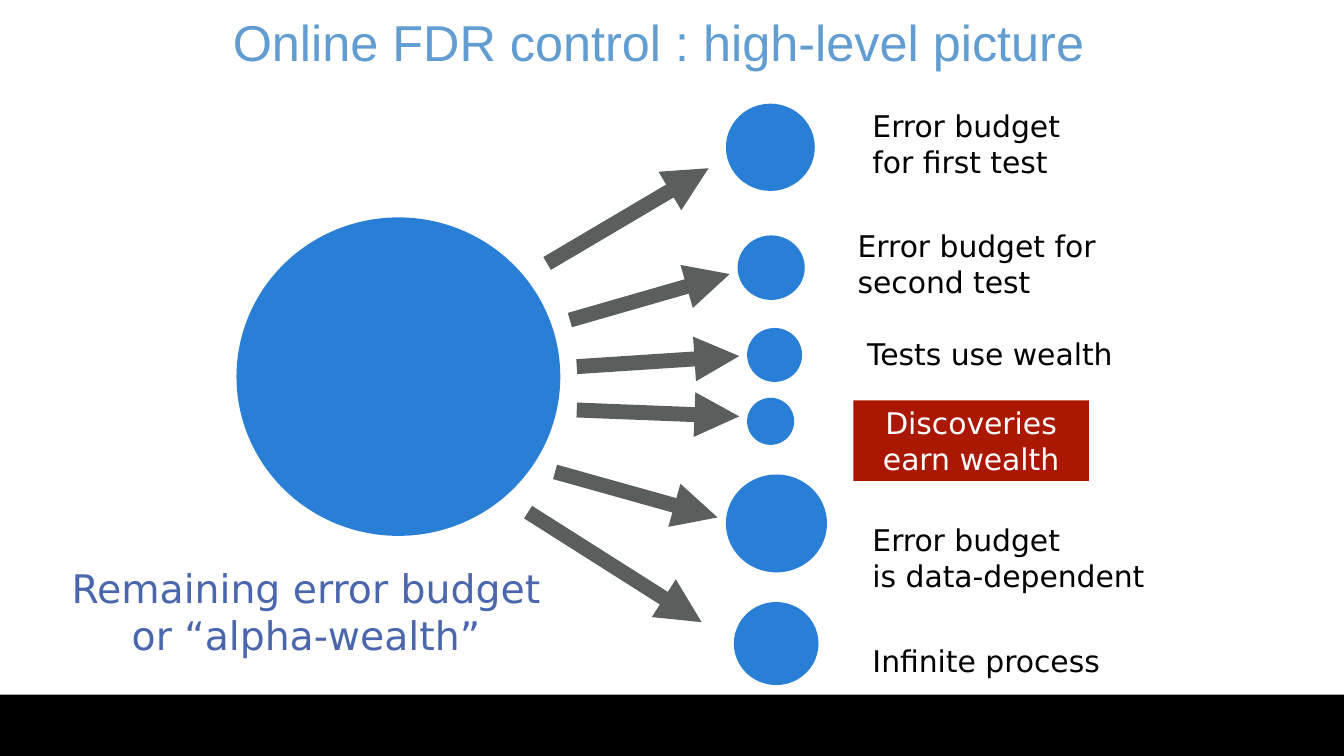
from lxml.etree import SubElement
from pptx import Presentation
from pptx.dml.color import RGBColor
from pptx.enum.shapes import MSO_CONNECTOR, MSO_SHAPE
from pptx.enum.text import MSO_ANCHOR, MSO_AUTO_SIZE, PP_ALIGN
from pptx.oxml.ns import qn
from pptx.util import Cm, Pt

COLORS = {
    "title": "629DD1",
    "caption": "4A66AC",
    "budget": "297FD5",
    "arrow": "5A5F5E",
    "highlight": "AB1802",
    "black": "000000",
    "white": "FFFFFF",
}

deck = Presentation()
deck.slide_width, deck.slide_height = Cm(25.4), Cm(14.29)
page = deck.slides.add_slide(deck.slide_layouts[6])


def add_filled(kind, place, color):
    shape = page.shapes.add_shape(kind, *[Cm(length) for length in place])
    shape.shadow.inherit = False
    shape.fill.solid()
    shape.fill.fore_color.rgb = RGBColor.from_string(COLORS[color])
    shape.line.fill.background()
    return shape


def add_text(text, place, size=16, font="DejaVu Sans", color="black",
             align=PP_ALIGN.LEFT, wrap=True, fill=None):
    if fill:
        box = add_filled(MSO_SHAPE.RECTANGLE, place, fill)
    else:
        box = page.shapes.add_textbox(*[Cm(length) for length in place])
    frame = box.text_frame
    frame.word_wrap = wrap
    frame.auto_size = MSO_AUTO_SIZE.SHAPE_TO_FIT_TEXT
    frame.vertical_anchor = MSO_ANCHOR.MIDDLE
    frame.margin_left = frame.margin_right = Cm(0.08)
    frame.margin_top = frame.margin_bottom = Cm(0.08)
    frame.text = text
    for para in frame.paragraphs:
        para.alignment = align
        for span in para.runs:
            span.font.size = Pt(size)
            span.font.name = font
            span.font.color.rgb = RGBColor.from_string(COLORS[color])


# Footer band, title and caption
add_filled(MSO_SHAPE.RECTANGLE, (0, 13.13, 25.4, 1.16), "black")
add_text("Online FDR control : high-level picture", (4.32, 0.13, 16.38, 1.3),
         size=27, font="Arial", color="title", wrap=False)
add_text("Remaining error budget\nor “alpha-wealth”", (1.09, 10.57, 9.4, 1.96),
         size=21.1, color="caption", align=PP_ALIGN.CENTER, wrap=False)

# Labels beside the tests
labels = [
    ("Error budget for first test", (16.41, 1.96, 4.45, 1.52)),
    ("Error budget for second test", (16.13, 4.22, 4.83, 1.52)),
    ("Tests use wealth", (16.31, 6.27, 5.23, 0.84)),
    ("Error budget\vis data-dependent", (16.41, 9.78, 5.56, 1.52)),
    ("Infinite process", (16.41, 12.07, 4.7, 0.84)),
]
for text, place in labels:
    add_text(text, place)
add_text("Discoveries earn wealth", (16.13, 7.57, 4.45, 1.52),
         color="white", align=PP_ALIGN.CENTER, fill="highlight")

# Remaining wealth, then an arrow and a circle for each test
add_filled(MSO_SHAPE.OVAL, (4.47, 4.11, 6.12, 6.02), "budget")
tests = [
    ((10.34, 4.98, 13.39, 3.18), (13.72, 1.96, 1.68, 1.65)),
    ((10.77, 6.05, 13.79, 5.18), (13.94, 4.45, 1.27, 1.22)),
    ((10.9, 6.93, 13.97, 6.73), (14.12, 6.2, 1.04, 1.02)),
    ((10.9, 7.75, 13.97, 7.87), (14.12, 7.52, 0.89, 0.89)),
    ((10.49, 8.92, 13.56, 9.78), (13.72, 8.97, 1.91, 1.85)),
    ((9.98, 9.68, 13.26, 11.76), (13.87, 11.38, 1.6, 1.57)),
]
for ends, circle in tests:
    arrow = page.shapes.add_connector(MSO_CONNECTOR.STRAIGHT,
                                      *[Cm(length) for length in ends])
    arrow.line.width = Pt(8)
    arrow.line.color.rgb = RGBColor.from_string(COLORS["arrow"])
    SubElement(arrow.line._get_or_add_ln(), qn("a:tailEnd"), type="triangle")
    SubElement(arrow._element.spPr, qn("a:effectLst"))
    add_filled(MSO_SHAPE.OVAL, circle, "budget")

deck.save("out.pptx")
